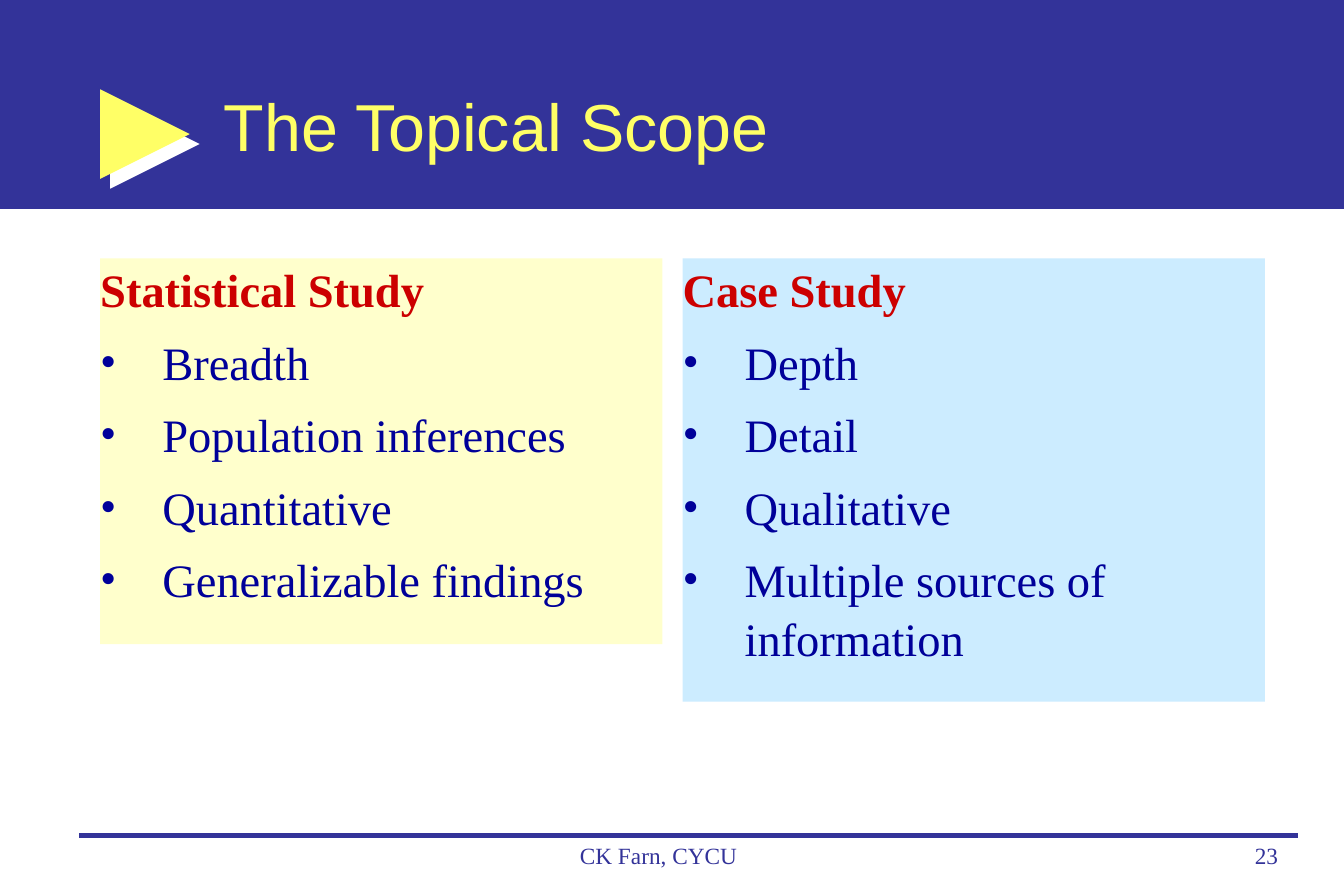
from dataclasses import dataclass

from lxml.etree import SubElement
from pptx import Presentation
from pptx.dml.color import RGBColor
from pptx.enum.shapes import MSO_CONNECTOR, MSO_SHAPE
from pptx.enum.text import MSO_ANCHOR, PP_ALIGN
from pptx.oxml.ns import qn
from pptx.util import Cm, Pt


@dataclass(frozen=True)
class Theme:
    band: str = "333399"
    accent: str = "FFFF66"
    accent_shadow: str = "FFFFFF"
    heading: str = "CC0000"
    body: str = "000099"
    statistical: str = "FFFFCC"
    case: str = "CCECFF"
    title_font: str = "Arial"
    body_font: str = "Times New Roman"
    title_size: int = 40
    body_size: int = 28
    footer_size: int = 14


theme = Theme()


def add_block(preset, left, top, width, height, color):
    """Add a flat, unlined preset shape, measured in centimetres."""
    block = slide.shapes.add_shape(preset, Cm(left), Cm(top), Cm(width), Cm(height))
    block.shadow.inherit = False
    block.fill.solid()
    block.fill.fore_color.rgb = RGBColor.from_string(color)
    block.line.fill.background()
    return block


def add_run(paragraph, wording, font, size, color, bold=False):
    run = paragraph.add_run()
    run.text = wording
    run.font.name = font
    run.font.size = Pt(size)
    run.font.bold = bold
    run.font.color.rgb = RGBColor.from_string(color)


deck = Presentation()
deck.slide_width, deck.slide_height = Cm(28.55), Cm(19.02)
slide = deck.slides.add_slide(deck.slide_layouts[6])

# Title band with its marker
add_block(MSO_SHAPE.RECTANGLE, 0, 0, 28.55, 4.44, theme.band)
marker = add_block(MSO_SHAPE.RIGHT_ARROW, 2.13, 1.9, 1.9, 1.9, theme.accent)
marker.adjustments[0], marker.adjustments[1] = 0.38, 1
effects = marker.element.spPr.find(qn("a:effectLst"))
marker_shadow = SubElement(effects, qn("a:outerShdw"), dist=str(Pt(8.5)),
                           dir="2700000", algn="ctr", rotWithShape="0")
SubElement(marker_shadow, qn("a:srgbClr"), val=theme.accent_shadow)

title = slide.shapes.add_textbox(Cm(4.75), Cm(1.07), Cm(21.64), Cm(3.18)).text_frame
title.word_wrap = True
title.vertical_anchor = MSO_ANCHOR.MIDDLE
title.margin_left = title.margin_right = title.margin_top = title.margin_bottom = 0
add_run(title.paragraphs[0], "The Topical Scope",
        theme.title_font, theme.title_size, theme.accent)

# The two kinds of study
studies = [
    (2.13, 11.94, 8.2, theme.statistical, "Statistical Study",
     ["Breadth", "Population inferences", "Quantitative", "Generalizable findings"]),
    (14.5, 12.37, 9.42, theme.case, "Case Study",
     ["Depth", "Detail", "Qualitative", "Multiple sources of information"]),
]
for left, width, height, color, heading, traits in studies:
    study = add_block(MSO_SHAPE.RECTANGLE, left, 5.49, width, height, color).text_frame
    study.word_wrap = True
    study.vertical_anchor = MSO_ANCHOR.TOP
    study.margin_left = study.margin_right = study.margin_top = study.margin_bottom = 0
    for row, wording in enumerate([heading] + traits):
        is_heading = row == 0
        paragraph = study.paragraphs[0] if is_heading else study.add_paragraph()
        paragraph.alignment = PP_ALIGN.LEFT
        paragraph.space_before = Pt(8.4)
        paragraph.line_spacing = 1.05
        indents = paragraph._p.get_or_add_pPr()
        indents.set("marL", str(Cm(1.32)))
        indents.set("indent", str(Cm(-1.32)))
        if not is_heading:
            SubElement(indents, qn("a:buFont"), typeface=theme.body_font)
            SubElement(indents, qn("a:buChar"), char="•")
        add_run(paragraph, wording, theme.body_font, theme.body_size,
                theme.heading if is_heading else theme.body, is_heading)

# Footer
rule = slide.shapes.add_connector(MSO_CONNECTOR.STRAIGHT,
                                  Cm(1.68), Cm(17.75), Cm(27.58), Cm(17.75))
rule.line.color.rgb = RGBColor.from_string(theme.band)
rule.line.width = Pt(3)
SubElement(rule.element.spPr, qn("a:effectLst"))

for left, width, alignment, wording in [
    (9.47, 9.04, PP_ALIGN.CENTER, "CK Farn, CYCU"),
    (21.46, 5.94, PP_ALIGN.RIGHT, "23"),
]:
    footer = slide.shapes.add_textbox(Cm(left), Cm(17.75), Cm(width), Cm(1.27)).text_frame
    footer.word_wrap = True
    footer.paragraphs[0].alignment = alignment
    add_run(footer.paragraphs[0], wording,
            theme.body_font, theme.footer_size, theme.band)

deck.save("out.pptx")
